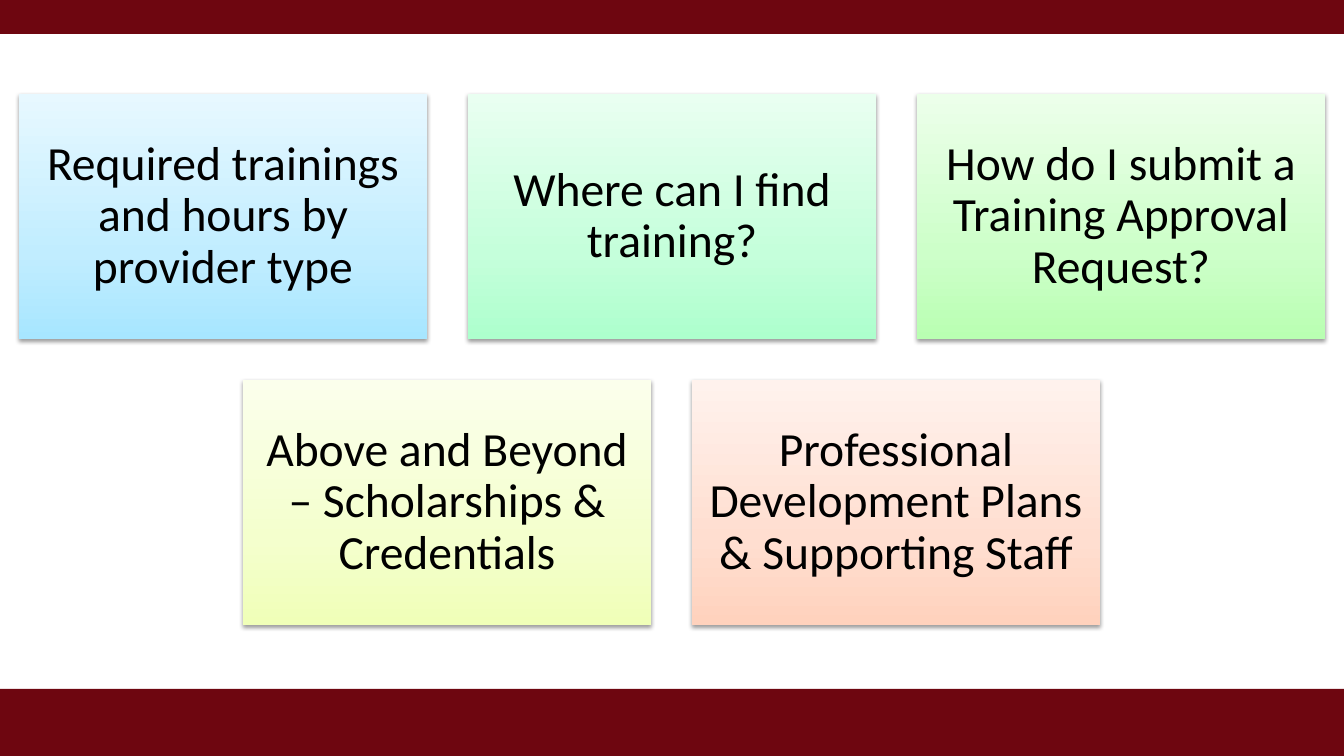
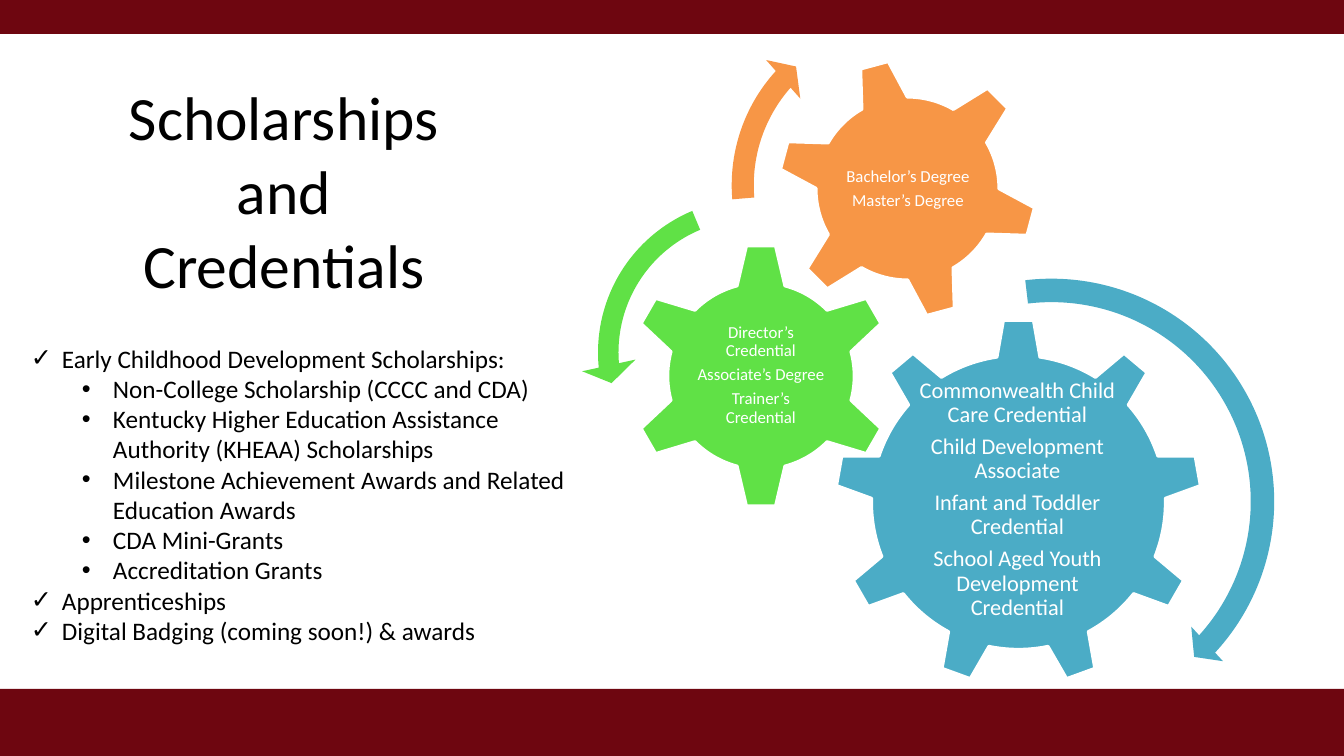
from copy import deepcopy

from lxml.etree import SubElement
from pptx import Presentation
from pptx.dml.color import RGBColor
from pptx.enum.shapes import MSO_SHAPE
from pptx.enum.text import MSO_ANCHOR, PP_ALIGN
from pptx.oxml.ns import qn
from pptx.util import Emu, Pt

PX = 914400 / 100.8
SLIDE_WIDTH, SLIDE_HEIGHT = 1344, 756
FONT = "Calibri"
MAROON = RGBColor(0x6E, 0x06, 0x10)
BLACK = RGBColor(0x00, 0x00, 0x00)
WHITE = RGBColor(0xFF, 0xFF, 0xFF)
TEAL = RGBColor(0x4B, 0xAC, 0xC6)
GREEN = RGBColor(0x60, 0xE1, 0x46)
ORANGE = RGBColor(0xF7, 0x96, 0x46)
SKY = [RGBColor(0xA7, 0xE6, 0xFF), RGBColor(0xC1, 0xED, 0xFF), RGBColor(0xE7, 0xF8, 0xFF)]
MINT = [RGBColor(0xAD, 0xFF, 0xCD), RGBColor(0xC5, 0xFF, 0xDB), RGBColor(0xE9, 0xFF, 0xF1)]
LEAF = [RGBColor(0xB9, 0xFF, 0xB2), RGBColor(0xCD, 0xFF, 0xC9), RGBColor(0xEC, 0xFF, 0xEA)]
LEMON = [RGBColor(0xF0, 0xFF, 0xB8), RGBColor(0xF4, 0xFF, 0xCD), RGBColor(0xFB, 0xFF, 0xEC)]
PEACH = [RGBColor(0xFF, 0xD2, 0xBD), RGBColor(0xFF, 0xDE, 0xD0), RGBColor(0xFF, 0xF2, 0xED)]
STOPS = [0, 0.35, 1]


def add_shape(slide, kind, box, color):
    shape = slide.shapes.add_shape(kind, *[Emu(round(n * PX)) for n in box])
    shape.shadow.inherit = False
    shape.fill.solid()
    shape.fill.fore_color.rgb = color
    shape.line.fill.background()
    return shape


def write_text(frame, texts, size, color, margins, paragraph_format, anchor=MSO_ANCHOR.MIDDLE):
    frame.word_wrap = True
    frame.vertical_anchor = anchor
    for side, margin in zip(["left", "top", "right", "bottom"], margins):
        setattr(frame, f"margin_{side}", Emu(round(margin * PX)))
    for index, text in enumerate(texts):
        paragraph = frame.add_paragraph() if index else frame.paragraphs[0]
        for name, value in paragraph_format.items():
            setattr(paragraph, name, value)
        run = paragraph.add_run()
        run.text = text
        for name, value in {"name": FONT, "size": Pt(size)}.items():
            setattr(run.font, name, value)
        run.font.color.rgb = color


presentation = Presentation()
presentation.slide_width = Emu(round(SLIDE_WIDTH * PX))
presentation.slide_height = Emu(round(SLIDE_HEIGHT * PX))
slides = [presentation.slides.add_slide(presentation.slide_layouts[6]) for _ in range(2)]
for slide in slides:
    for top, height in [(0, 34), (689, 67)]:
        add_shape(slide, MSO_SHAPE.RECTANGLE, (0, top, SLIDE_WIDTH, height), MAROON)
topics_slide, scholarships_slide = slides

CARD_WIDTH, CARD_HEIGHT, CARD_GAP, CARDS_TOP = 408, 245, 41, 94
card_rows = [
    [
        ("Required trainings and hours by provider type", SKY),
        ("Where can I find training?", MINT),
        ("How do I submit a Training Approval Request?", LEAF),
    ],
    [
        ("Above and Beyond – Scholarships & Credentials", LEMON),
        ("Professional Development Plans & Supporting Staff", PEACH),
    ],
]
card_format = {"alignment": PP_ALIGN.CENTER, "line_spacing": 0.9}
for row, cards in enumerate(card_rows):
    row_width = len(cards) * (CARD_WIDTH + CARD_GAP) - CARD_GAP
    row_left = (SLIDE_WIDTH - row_width) // 2
    top = CARDS_TOP + row * (CARD_HEIGHT + CARD_GAP)
    for column, (text, colors) in enumerate(cards):
        left = row_left + column * (CARD_WIDTH + CARD_GAP)
        card = add_shape(topics_slide, MSO_SHAPE.RECTANGLE, (left, top, CARD_WIDTH, CARD_HEIGHT), colors[0])
        card.fill.gradient()
        card.fill.gradient_angle = 90
        properties = card._element.spPr
        stop_list = properties.find(qn("a:gradFill")).find(qn("a:gsLst"))
        stop_list.append(deepcopy(stop_list[0]))
        for stop, position, color in zip(card.fill.gradient_stops, STOPS, colors):
            stop.position = position
            stop.color.rgb = color
        shadow = SubElement(
            properties.find(qn("a:effectLst")), qn("a:outerShdw"),
            blurRad="40000", dist="20000", dir="5400000", rotWithShape="0",
        )
        shadow_color = SubElement(shadow, qn("a:srgbClr"), val="000000")
        SubElement(shadow_color, qn("a:alpha"), val="38000")
        write_text(card.text_frame, [text], 34, BLACK, [14] * 4, card_format)

title = scholarships_slide.shapes.add_textbox(*[Emu(round(n * PX)) for n in (102, 43, 364, 294)])
write_text(title.text_frame, ["Scholarships and Credentials"], 44, BLACK, [10, 5, 10, 5],
           {"alignment": PP_ALIGN.CENTER})

gears = [
    (MSO_SHAPE.GEAR_9, (835, 319, 367, 367), 0, TEAL, (908, 405, 219, 189), 16, [
        "Commonwealth Child Care Credential",
        "Child Development Associate",
        "Infant and Toddler Credential",
        "School Aged Youth Development Credential",
    ]),
    (MSO_SHAPE.GEAR_6, (628, 243, 266, 266), 0, GREEN, (695, 310, 132, 131), 12, [
        "Director’s Credential",
        "Associate’s Degree",
        "Trainer’s Credential",
    ]),
    (MSO_SHAPE.GEAR_6, (777, 58, 261, 261), 345, ORANGE, (835, 116, 146, 146), 12, [
        "Bachelor’s Degree",
        "Master’s Degree",
    ]),
]
for kind, box, rotation, color, text_box, size, texts in gears:
    gear = add_shape(scholarships_slide, kind, box, color)
    gear.rotation = rotation
    gear.line.color.rgb = WHITE
    gear.line.width = Pt(2)
    label = scholarships_slide.shapes.add_textbox(*[Emu(round(n * PX)) for n in text_box])
    write_text(label.text_frame, texts, size, WHITE, [2] * 4,
               {**card_format, "space_after": Pt(size * 0.35)})

arrows = [
    (MSO_SHAPE.CIRCULAR_ARROW, (817, 267, 469, 469), TEAL, [0.05, 2.99, 25.48, 157.95, 0.05]),
    (MSO_SHAPE.LEFT_CIRCULAR_ARROW, (581, 182, 341, 341), GREEN, [0.06, 4.3, 104.89, 148.38, 0.08]),
    (MSO_SHAPE.CIRCULAR_ARROW, (717, 1, 368, 368), ORANGE, [0.06, 3.94, 133.14, 105.08, 0.07]),
]
for kind, box, color, adjustments in arrows:
    arrow = add_shape(scholarships_slide, kind, box, color)
    for index, value in enumerate(adjustments):
        arrow.adjustments[index] = value

awards = [
    (0, "Early Childhood Development Scholarships:"),
    (1, "Non-College Scholarship (CCCC and CDA)"),
    (1, "Kentucky Higher Education Assistance Authority (KHEAA) Scholarships"),
    (1, "Milestone Achievement Awards and Related Education Awards"),
    (1, "CDA Mini-Grants"),
    (1, "Accreditation Grants"),
    (0, "Apprenticeships"),
    (0, "Digital Badging (coming soon!) & awards"),
]
awards_box = scholarships_slide.shapes.add_textbox(*[Emu(round(n * PX)) for n in (21, 338, 578, 315)])
write_text(awards_box.text_frame, [text for _, text in awards], 18, BLACK, [10, 5, 10, 5],
           {"alignment": PP_ALIGN.LEFT}, MSO_ANCHOR.TOP)
for paragraph, (level, _) in zip(awards_box.text_frame.paragraphs, awards):
    paragraph.level = level
    properties = paragraph._p.get_or_add_pPr()
    properties.set("marL", str(round([31, 82][level] * PX)))
    properties.set("indent", str(round(-31 * PX)))
    SubElement(properties, qn("a:buFont"), typeface="Arial")
    SubElement(properties, qn("a:buChar"), char="✓•"[level])

presentation.save("out.pptx")
